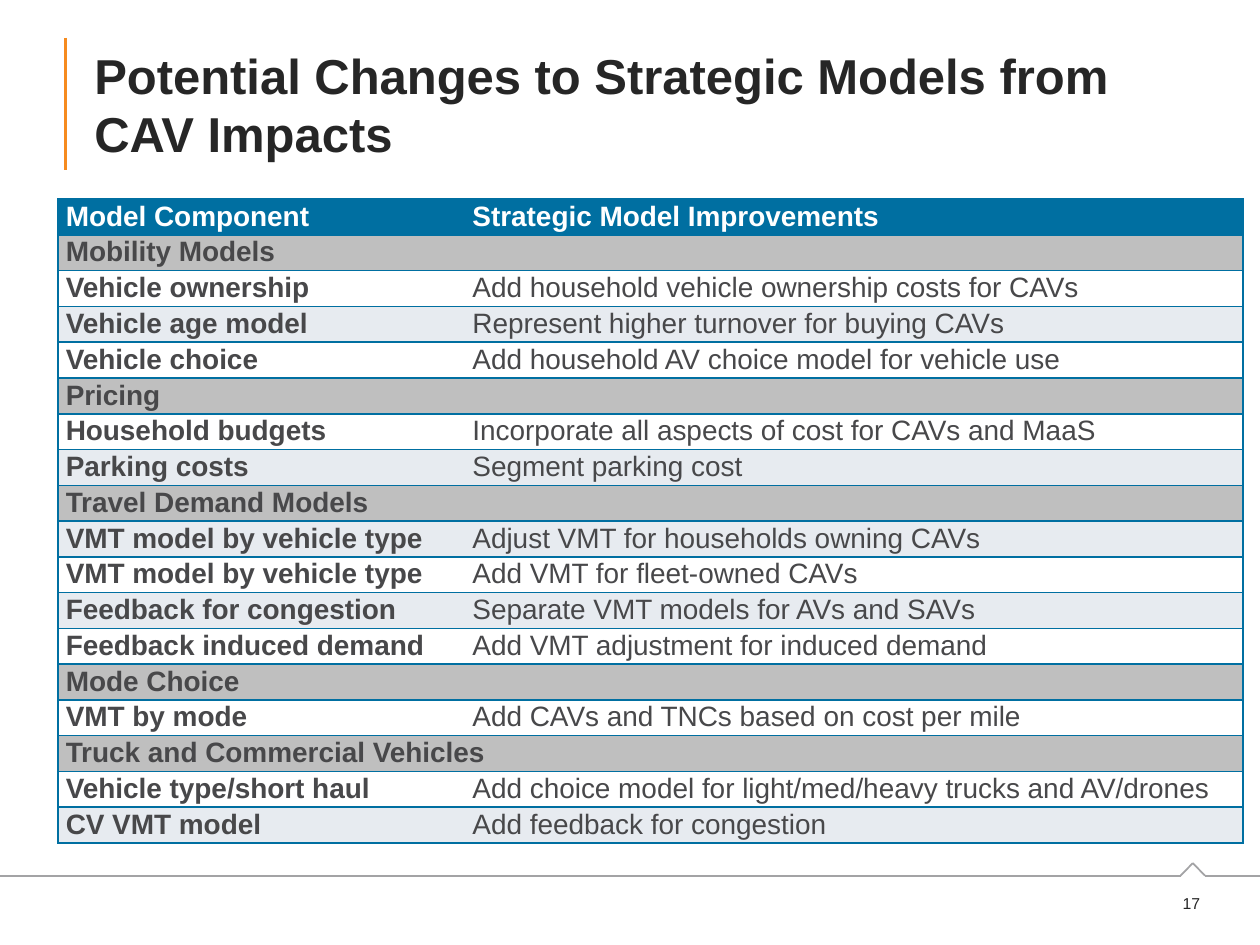
from lxml import etree
from pptx import Presentation
from pptx.dml.color import RGBColor
from pptx.enum import shapes, text
from pptx.oxml import ns
from pptx.util import Pt

BLUE, ORANGE, RULE_GRAY = "006FA1", "F68B1F", "A3A3A5"
DARK, BODY = "262626", "48484A"
SECTION_FILL, BAND_FILL, WHITE = "BFBFBF", "E7EBF0", "FFFFFF"

HEADER = ("Model Component", "Strategic Model Improvements")
SECTIONS = {
    "Mobility Models": [
        ("Vehicle ownership", "Add household vehicle ownership costs for CAVs"),
        ("Vehicle age model", "Represent higher turnover for buying CAVs"),
        ("Vehicle choice", "Add household AV choice model for vehicle use"),
    ],
    "Pricing": [
        ("Household budgets", "Incorporate all aspects of cost for CAVs and MaaS"),
        ("Parking costs", "Segment parking cost"),
    ],
    "Travel Demand Models": [
        ("VMT model by vehicle type", "Adjust VMT for households owning CAVs"),
        ("VMT model by vehicle type", "Add VMT for fleet-owned CAVs"),
        ("Feedback for congestion", "Separate VMT models for AVs and SAVs"),
        ("Feedback induced demand", "Add VMT adjustment for induced demand"),
    ],
    "Mode Choice": [
        ("VMT by mode", "Add CAVs and TNCs based on cost per mile"),
    ],
    "Truck and Commercial Vehicles": [
        ("Vehicle type/short haul",
         "Add choice model for light/med/heavy trucks and AV/drones"),
        ("CV VMT model", "Add feedback for congestion"),
    ],
}


def color(value):
    return RGBColor.from_string(value)


def write_text(frame, content, size, fill, bold=False, spacing=1.0,
               align=text.PP_ALIGN.LEFT):
    paragraph = frame.paragraphs[0]
    paragraph.alignment = align
    paragraph.line_spacing = spacing
    run = paragraph.add_run()
    run.text = content
    run.font.name = "Arial"
    run.font.size = Pt(size)
    run.font.bold = bold
    run.font.color.rgb = color(fill)


def add_text_box(slide, box, content, **text_format):
    frame = slide.shapes.add_textbox(*map(Pt, box)).text_frame
    frame.word_wrap = True
    frame.vertical_anchor = text.MSO_ANCHOR.MIDDLE
    write_text(frame, content, **text_format)


def add_line(slide, start, end, stroke, width):
    line = slide.shapes.add_connector(
        shapes.MSO_CONNECTOR.STRAIGHT, *map(Pt, start + end))
    line.line.color.rgb = color(stroke)
    line.line.width = Pt(width)
    etree.SubElement(line._element.spPr, ns.qn("a:effectLst"))


def set_borders(cell, sides):
    """Draw blue borders on the named sides (L, R, T, B) and clear the others."""
    properties = cell._tc.get_or_add_tcPr()
    for side in "LRTB":
        border = etree.SubElement(properties, ns.qn(f"a:ln{side}"), w=str(Pt(1)))
        if side in sides:
            fill = etree.SubElement(border, ns.qn("a:solidFill"))
            etree.SubElement(fill, ns.qn("a:srgbClr"), val=BLUE)
        else:
            etree.SubElement(border, ns.qn("a:noFill"))


def fill_cell(cell, content, sides, background, **text_format):
    cell.margin_left = cell.margin_right = Pt(4.5)
    cell.margin_top = cell.margin_bottom = 0
    set_borders(cell, sides)
    cell.fill.solid()
    cell.fill.fore_color.rgb = color(background)
    write_text(cell.text_frame, content, size=16, spacing=1.06, **text_format)


def add_title(slide, left, top, width, height):
    add_line(slide, (left, top), (left, top + height), ORANGE, 1.5)
    add_text_box(slide, (left + 9.4, top, width - 9.4, height),
                 "Potential Changes to Strategic Models from CAV Impacts",
                 size=28, fill=DARK, bold=True)


def add_model_table(slide, left, top, width, height):
    rows = [HEADER]
    for section, entries in SECTIONS.items():
        rows += [(section, ""), *entries]
    table = slide.shapes.add_table(
        len(rows), 2, *map(Pt, (left, top, width, height))).table
    table.first_row = table.horz_banding = False
    table.columns[0].width = Pt(232.4)
    table.columns[1].width = Pt(width - 232.4)
    for index, row in enumerate(rows):
        table.rows[index].height = Pt(height / len(rows))
        is_header, is_section = index == 0, not row[1]
        if is_header:
            background = BLUE
        elif is_section:
            background = SECTION_FILL
        else:
            background = BAND_FILL if index % 2 else WHITE
        if is_section:
            table.cell(index, 0).merge(table.cell(index, 1))
        for column, content in enumerate(row):
            sides = "LRTB" if is_section else ("LTB", "RTB")[column]
            fill_cell(table.cell(index, column), content, sides, background,
                      fill=WHITE if is_header else BODY,
                      bold=is_header or column == 0)


def add_footer(slide, left, top, width, height):
    """Draw the rule with its small peak, and the page number below it."""
    base = top + 7.2
    points = [(left, base), (left + 674.6, base), (left + 681.6, top),
              (left + 688.6, base), (left + width, base)]
    for start, end in zip(points, points[1:]):
        add_line(slide, start, end, RULE_GRAY, 1)
    add_text_box(slide, (left + 662.7, top + height - 18, 30.2, 18), "17",
                 size=9, fill=DARK, align=text.PP_ALIGN.RIGHT)


def main():
    presentation = Presentation()
    presentation.slide_width, presentation.slide_height = Pt(720), Pt(540)
    slide = presentation.slides.add_slide(presentation.slide_layouts[6])
    add_title(slide, 37.4, 21.6, 646.6, 75.6)
    add_footer(slide, 0, 493.2, 720, 31.7)
    add_model_table(slide, 33.1, 113.8, 677.2, 368.1)
    presentation.save("out.pptx")


if __name__ == "__main__":
    main()
